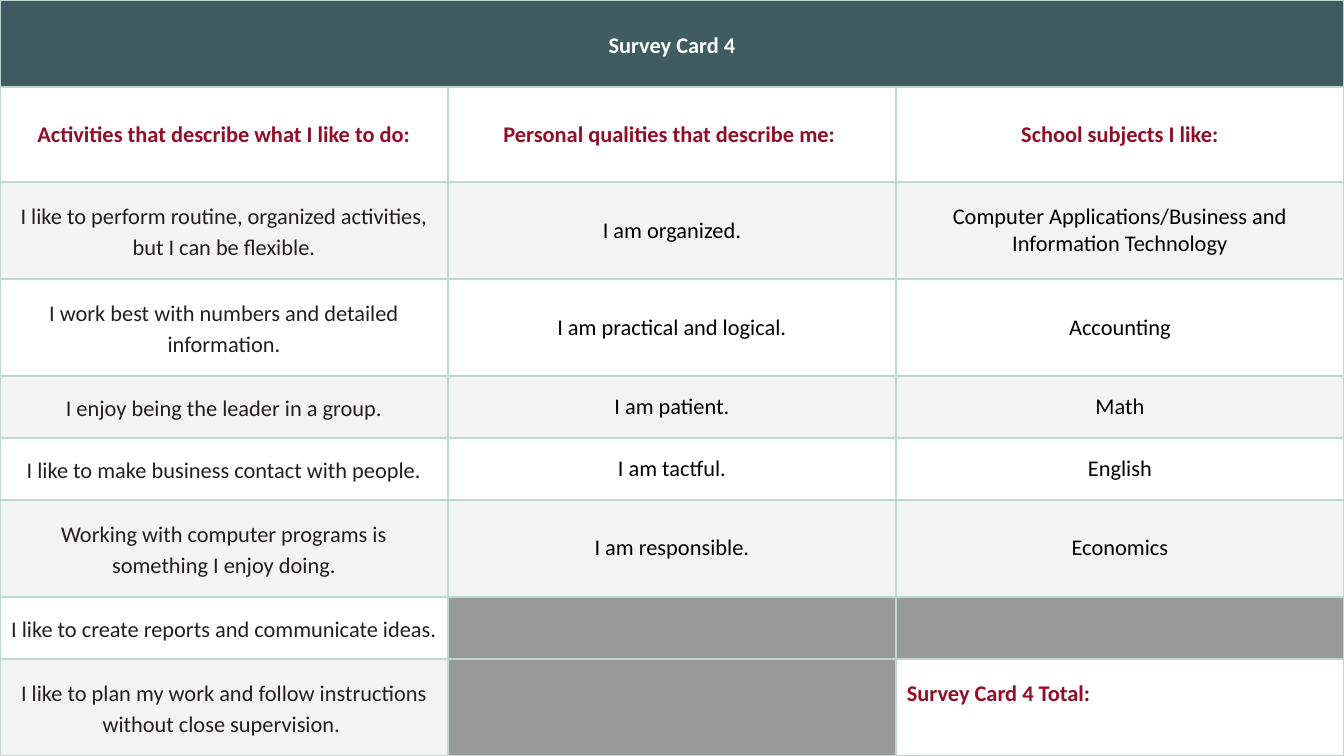
from dataclasses import dataclass

from lxml import etree
from pptx import Presentation
from pptx.dml.color import RGBColor
from pptx.enum.text import MSO_ANCHOR, PP_ALIGN
from pptx.oxml.ns import qn
from pptx.util import Emu, Pt

CENTER, LEFT = PP_ALIGN.CENTER, PP_ALIGN.LEFT
MIDDLE = MSO_ANCHOR.MIDDLE

WHITE = RGBColor(0xFF, 0xFF, 0xFF)
BLACK = RGBColor(0x00, 0x00, 0x00)
INK = RGBColor(0x23, 0x1F, 0x20)
CRIMSON = RGBColor(0x91, 0x0D, 0x28)
TEAL = RGBColor(0x3E, 0x5C, 0x61)
PALE = RGBColor(0xF3, 0xF3, 0xF3)
GREY = RGBColor(0x99, 0x99, 0x99)
BORDER = RGBColor(0xBE, 0xD7, 0xD3)

EMU_PER_PX = 914400 / 134.4
PAGE_WIDTH, PAGE_HEIGHT = 1344, 756
TALL, SHORT = 97, 62
ROW_HEIGHTS = (87, 95, TALL, TALL, SHORT, SHORT, TALL, SHORT, TALL)
INSET = 11
TOTAL_RAISE = 27
FONT, FONT_SIZE = "Calibri", Pt(12)

TITLE = "Survey Card 4"
TOTAL = "Survey Card 4 Total:"
HEADINGS = (
    "Activities that describe what I like to do:",
    "Personal qualities that describe me: ",
    "School subjects I like:",
)
ANSWERS = (
    ("I like to perform routine, organized activities, but I can be flexible.",
     "I am organized.",
     "Computer Applications/Business and Information Technology"),
    ("I work best with numbers and detailed information.",
     "I am practical and logical.", "Accounting"),
    ("I enjoy being the leader in a group.", "I am patient.", "Math"),
    ("I like to make business contact with people.", "I am tactful.", "English"),
    ("Working with computer programs is something I enjoy doing.",
     "I am responsible.", "Economics"),
    ("I like to create reports and communicate ideas.", "", ""),
    ("I like to plan my work and follow instructions without close supervision. ",
     "", TOTAL),
)


@dataclass(frozen=True)
class CellStyle:
    fill: RGBColor
    color: RGBColor = BLACK
    bold: bool = False
    align: PP_ALIGN = CENTER
    line_spacing: float = 1.0
    space_before: int = 0
    space_after: int = 0
    bottom_inset: int = INSET


TITLE_STYLE = CellStyle(TEAL, WHITE, True, line_spacing=1.15, space_after=6)
HEADING_STYLE = CellStyle(WHITE, CRIMSON, True, space_before=10)
TOTAL_STYLE = CellStyle(WHITE, CRIMSON, True, LEFT, space_before=10,
                        bottom_inset=INSET + TOTAL_RAISE)
UNUSED_STYLE = CellStyle(GREY)


def px(length: int) -> Emu:
    return Emu(round(length * EMU_PER_PX))


def add_borders(cell) -> None:
    """Line all four sides; call before filling, as lines precede the fill."""
    properties = cell._tc.get_or_add_tcPr()
    for side in ("a:lnL", "a:lnR", "a:lnT", "a:lnB"):
        line = etree.SubElement(properties, qn(side), w=str(Pt(1)))
        fill = etree.SubElement(line, qn("a:solidFill"))
        etree.SubElement(fill, qn("a:srgbClr"), val=str(BORDER))


def write_cell(cell, text: str, style: CellStyle) -> None:
    add_borders(cell)
    cell.fill.solid()
    cell.fill.fore_color.rgb = style.fill
    cell.vertical_anchor = MIDDLE
    cell.margin_left = cell.margin_right = cell.margin_top = px(INSET)
    cell.margin_bottom = px(style.bottom_inset)
    para = cell.text_frame.paragraphs[0]
    if not text:
        # An empty cell keeps the table's text size, so its row cannot grow.
        etree.SubElement(para._p, qn("a:endParaRPr"), sz=str(int(FONT_SIZE.pt * 100)))
        return
    para.text = text
    para.alignment = style.align
    para.line_spacing = style.line_spacing
    para.space_before = Pt(style.space_before)
    para.space_after = Pt(style.space_after)
    for span in para.runs:
        span.font.name = FONT
        span.font.size = FONT_SIZE
        span.font.bold = style.bold
        span.font.color.rgb = style.color


def answer_style(row: int, column: int, text: str) -> CellStyle:
    if not text:
        return UNUSED_STYLE
    if text == TOTAL:
        return TOTAL_STYLE
    band = WHITE if row % 2 else PALE
    if column == 0:
        return CellStyle(band, INK, line_spacing=1.15)
    return CellStyle(band)


def add_survey_table(page) -> None:
    columns = len(HEADINGS)
    table = page.shapes.add_table(
        len(ROW_HEIGHTS), columns, 0, 0, px(PAGE_WIDTH), px(PAGE_HEIGHT)).table
    table.first_row = table.horz_banding = False
    for column in table.columns:
        column.width = px(PAGE_WIDTH // columns)
    for row, height in zip(table.rows, ROW_HEIGHTS):
        row.height = px(height)

    table.cell(0, 0).merge(table.cell(0, columns - 1))
    for column, heading in enumerate(HEADINGS):
        write_cell(table.cell(0, column), "" if column else TITLE, TITLE_STYLE)
        write_cell(table.cell(1, column), heading, HEADING_STYLE)
    for row, answers in enumerate(ANSWERS):
        for column, text in enumerate(answers):
            write_cell(table.cell(row + 2, column), text,
                       answer_style(row, column, text))


def main() -> None:
    deck = Presentation()
    deck.slide_width, deck.slide_height = px(PAGE_WIDTH), px(PAGE_HEIGHT)
    page = deck.slides.add_slide(deck.slide_layouts[6])
    add_survey_table(page)
    deck.save("out.pptx")


if __name__ == "__main__":
    main()
